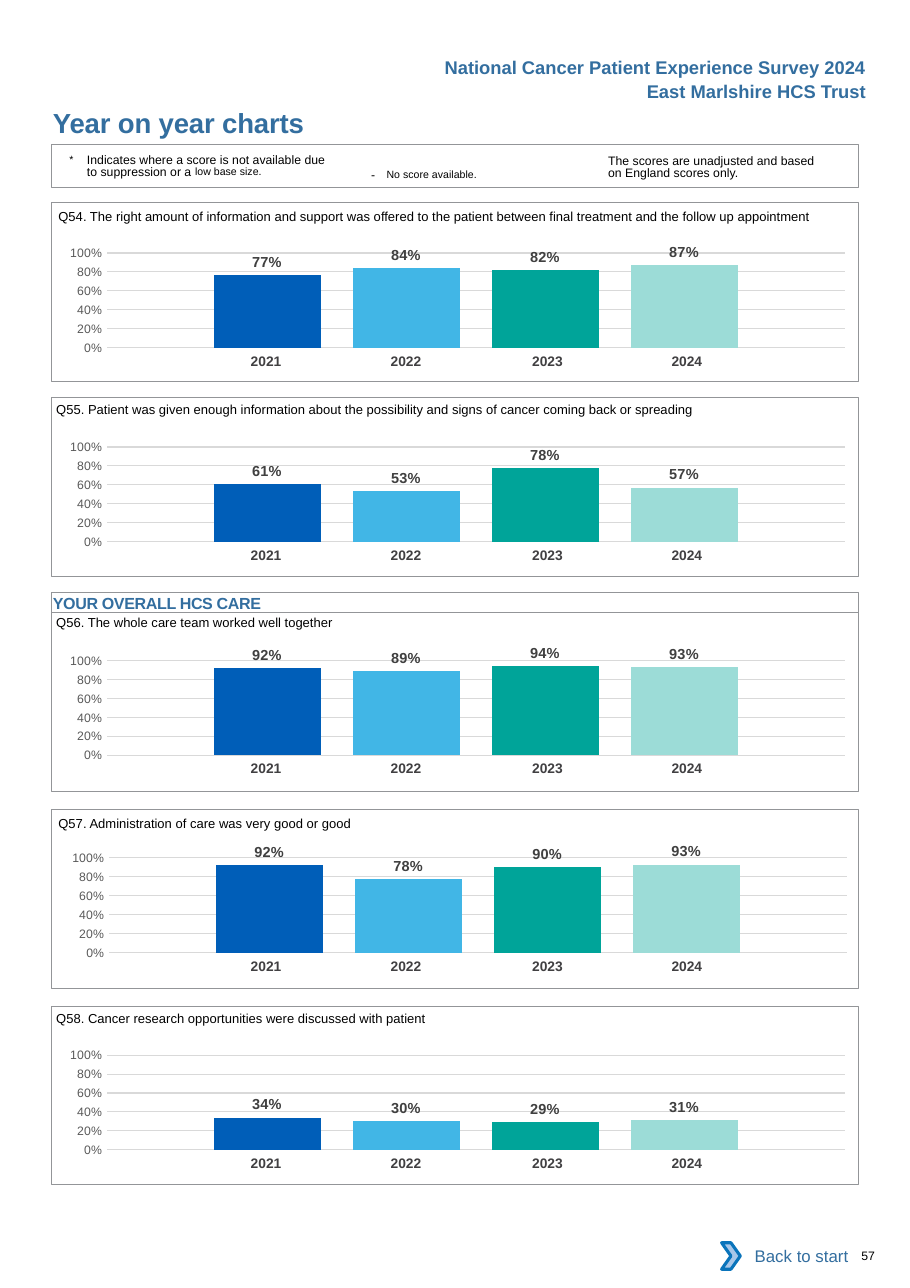
"""Build the year on year charts page of a patient experience survey."""
from lxml import etree
from pptx import Presentation
from pptx.chart.data import CategoryChartData
from pptx.dml.color import RGBColor
from pptx.enum.chart import XL_CHART_TYPE as ChartType, XL_LABEL_POSITION as LabelPosition
from pptx.enum.chart import XL_TICK_MARK as TickMark
from pptx.enum.shapes import MSO_SHAPE as Shape
from pptx.enum.text import MSO_ANCHOR as Anchor, MSO_AUTO_SIZE as AutoSize, PP_ALIGN as Align
from pptx.oxml.ns import qn
from pptx.util import Inches, Pt

BLUE, GREY, BLACK = "336E9F", "939598", "000000"
NO_TABLE_STYLE = "{2D5ABB26-0587-4C30-8999-92F81FD0307C}"
YEARS = {"2021": "005EB8", "2022": "41B6E6", "2023": "00A499", "2024": "9CDCD7"}
YEAR_COLUMNS = [(1.27, 0), (1.27, 0), (1.34, 0.04), (1.27, 0.12)]
PLOT_AREA = {"x": 0.079, "y": 0.145, "w": 0.915, "h": 0.666}


def paint(hex_color):
    """Turn a hex string into a colour."""
    return RGBColor.from_string(hex_color)


def write(frame, text, size=8, color=BLACK, bold=False, align=Align.LEFT, anchor=Anchor.TOP,
          margins=(0, 0, 0, 0), wrap=True, leading=None):
    """Write a string, or (text, size, attributes) runs, as one paragraph."""
    if margins:
        frame.auto_size = AutoSize.NONE
        frame.word_wrap = wrap
        frame.vertical_anchor = anchor
        (frame.margin_left, frame.margin_top,
         frame.margin_right, frame.margin_bottom) = map(Inches, margins)
    paragraph = frame.paragraphs[0]
    paragraph.alignment = align
    if leading:
        paragraph.line_spacing = Pt(leading)
    runs = [(text, size, {})] if isinstance(text, str) else text
    for words, run_size, attributes in runs:
        run = paragraph.add_run()
        run.text = words
        run.font.name = "Arial"
        run.font.size = Pt(run_size)
        run.font.bold = bold
        run.font.color.rgb = paint(color)
        for key, value in attributes.items():
            run.font._element.set(key, value)
    return paragraph


prs = Presentation()
prs.slide_width, prs.slide_height = Inches(8.26), Inches(11.69)
slide = prs.slides.add_slide(prs.slide_layouts[5])

title = slide.shapes.title
title.left, title.top, title.width, title.height = map(Inches, (0.47, 0.96, 4.5, 0.3))
write(title.text_frame, [("Year on year charts", 18, {"spc": "-10"})], color=BLUE, bold=True,
      margins=(0.01, 0, 0, 0))

# question, text left and top, frame top, chart left and top, years top, scores
questions = [
    ("Q54. The right amount of information and support was offered to the patient between "
     "final treatment and the follow up appointment",
     (0.53, 1.8), 1.84, (0.39, 2.11), 3.16, (0.77, 0.84, 0.82, 0.87)),
    ("Q55. Patient was given enough information about the possibility and signs of cancer "
     "coming back or spreading",
     (0.51, 3.55), 3.61, (0.39, 3.87), 4.92, (0.61, 0.53, 0.78, 0.57)),
    ("Q56. The whole care team worked well together",
     (0.51, 5.49), 5.56, (0.39, 5.81), 6.86, (0.92, 0.89, 0.94, 0.93)),
    ("Q57. Administration of care was very good or good",
     (0.53, 7.31), 7.35, (0.41, 7.6), 8.65, (0.92, 0.78, 0.9, 0.93)),
    ("Q58. Cancer research opportunities were discussed with patient",
     (0.51, 9.08), 9.13, (0.39, 9.39), 10.44, (0.34, 0.3, 0.29, 0.31)),
]

outlines = [
    (Shape.RECTANGLE, (0.47, 1.31, 7.32, 0.39), None, GREY, 0.75),
    (Shape.RECTANGLE, (0.47, 5.38, 7.32, 0.18), None, GREY, 0.5),
    *[(Shape.RECTANGLE, (0.47, question[2], 7.32, 1.62), None, GREY, 0.5)
      for question in questions],
    (Shape.RECTANGLE, (6.62, 11.19, 1.18, 0.42), "FFFFFF", None, 0),
    (Shape.CHEVRON, (6.55, 11.28, 0.17, 0.24), "A8C7E9", "0A74BB", 2),
]
drawn = []
for kind, box, fill, line, width in outlines:
    outline = slide.shapes.add_shape(kind, *map(Inches, box))
    outline.shadow.inherit = False
    if fill:
        outline.fill.solid()
        outline.fill.fore_color.rgb = paint(fill)
    else:
        outline.fill.background()
    if line:
        outline.line.color.rgb = paint(line)
        outline.line.width = Pt(width)
    else:
        outline.line.fill.background()
    drawn.append(outline)
section_heading, back_button = drawn[1], drawn[-2]
write(section_heading.text_frame, [("YOUR OVERALL HCS CARE", 10.5, {"spc": "-20"})],
      color=BLUE, bold=True, margins=(0.01, 0.01, 0, 0))
write(back_button.text_frame, "Back to start", size=11, color=BLUE, align=Align.RIGHT,
      anchor=Anchor.MIDDLE, margins=(0.1, 0.05, 0.1, 0.05))

for question, text_at, frame_top, chart_at, years_top, scores in questions:
    years_frame = slide.shapes.add_table(1, 4, *map(Inches, (1.73, years_top, 5.15, 0.27)))
    years_frame.element.find(".//" + qn("a:tableStyleId")).text = NO_TABLE_STYLE
    years = years_frame.table
    years.first_row = years.horz_banding = False
    years.rows[0].height = Inches(0.27)
    for index, (year, (width, right_margin)) in enumerate(zip(YEARS, YEAR_COLUMNS)):
        years.columns[index].width = Inches(width)
        cell = years.cell(0, index)
        cell.fill.background()
        cell.margin_left, cell.margin_right = Inches(0.1), Inches(right_margin)
        cell.margin_top = cell.margin_bottom = Inches(0.05)
        write(cell.text_frame, year, size=9, color="414042", bold=True, align=Align.CENTER,
              margins=None)

    results = CategoryChartData(number_format="0%")
    results.categories = ["1"]
    for index, score in enumerate(scores, 1):
        results.add_series(f"Series {index}", [score])
    chart = slide.shapes.add_chart(ChartType.COLUMN_CLUSTERED,
                                   *map(Inches, (*chart_at, 7.32, 1.29)), results).chart
    chart.has_title = chart.has_legend = False
    chart.font.name, chart.font.size = "Calibri", Pt(10)
    chart.font.color.rgb = paint(BLACK)
    chart.category_axis.visible = False

    percent = chart.value_axis
    percent.minimum_scale, percent.maximum_scale, percent.major_unit = 0, 1, 0.2
    percent.major_tick_mark = percent.minor_tick_mark = TickMark.NONE
    percent.format.line.fill.background()
    percent.major_gridlines.format.line.color.rgb = paint("D9D9D9")
    percent.major_gridlines.format.line.width = Pt(0.75)
    ticks = percent.tick_labels
    ticks.number_format, ticks.number_format_is_linked = "0%", False
    ticks.font.name, ticks.font.size = "Arial", Pt(8)
    ticks.font.color.rgb = paint("595959")

    bars = chart.plots[0]
    bars.gap_width, bars.overlap, bars.vary_by_categories = 200, -30, False
    for bar, bar_color in zip(bars.series, YEARS.values()):
        bar.invert_if_negative = False
        bar.format.fill.solid()
        bar.format.fill.fore_color.rgb = paint(bar_color)
        labels = bar.data_labels
        labels.show_value, labels.position = True, LabelPosition.OUTSIDE_END
        labels.number_format, labels.number_format_is_linked = "0%", False
        labels.font.name, labels.font.size, labels.font.bold = "Arial", Pt(9.5), True
        labels.font.color.rgb = paint("404040")

    plot_area = chart.element.find(".//" + qn("c:plotArea"))
    for automatic in plot_area.findall(qn("c:layout")):
        plot_area.remove(automatic)
    layout = etree.Element(qn("c:layout"))
    manual = etree.SubElement(layout, qn("c:manualLayout"))
    settings = {"layoutTarget": "inner", "xMode": "edge", "yMode": "edge", **PLOT_AREA}
    for tag, value in settings.items():
        etree.SubElement(manual, qn(f"c:{tag}")).set("val", str(value))
    plot_area.insert(0, layout)

    question_box = slide.shapes.add_textbox(*map(Inches, (*text_at, 7.25, 0.24)))
    write(question_box.text_frame, question, size=8.5, margins=(0, 0.09, 0, 0))

suppressed = [("*\t", 12, {"baseline": "3000"}),
              ("Indicates where a score is not available due to suppression or a ", 8, {}),
              ("low base", 12, {"baseline": "7000"}),
              (" size.", 12, {"baseline": "7000"})]
no_score = [("- ", 8, {"spc": "260"}), ("No score available.", 12, {"baseline": "3000"})]
heading = {"size": 12, "color": BLUE, "bold": True, "align": Align.RIGHT, "wrap": False,
           "margins": (0.1, 0.05, 0.1, 0.05)}
notes = [
    ((5.52, 1.38, 2.01, 0.27), "The scores are unadjusted and based on England scores only.",
     {"margins": (0, 0.03, 0, 0), "leading": 8.1}),
    ((3.27, 1.41, 1.83, 0.24), no_score, {"margins": (0.1, 0.05, 0.1, 0.05)}),
    ((0.63, 1.38, 2.4, 0.27), suppressed, {"margins": (0, 0.03, 0, 0), "leading": 8.1}),
    ((5.77, 0.68, 2.19, 0.3), "East Marlshire HCS Trust", heading),
    ((3.92, 0.46, 4.04, 0.3), "National Cancer Patient Experience Survey 2024", heading),
    ((7.72, 11.33, 0.51, 0.13), "57", {"margins": (0.1, 0, 0, 0)}),
]
for box, text, style in notes:
    note = write(slide.shapes.add_textbox(*map(Inches, box)).text_frame, text, **style)
    if text is suppressed:
        hanging = note._p.get_or_add_pPr()
        hanging.set("marL", str(Inches(0.16)))
        hanging.set("indent", str(-Inches(0.16)))

prs.save("out.pptx")
